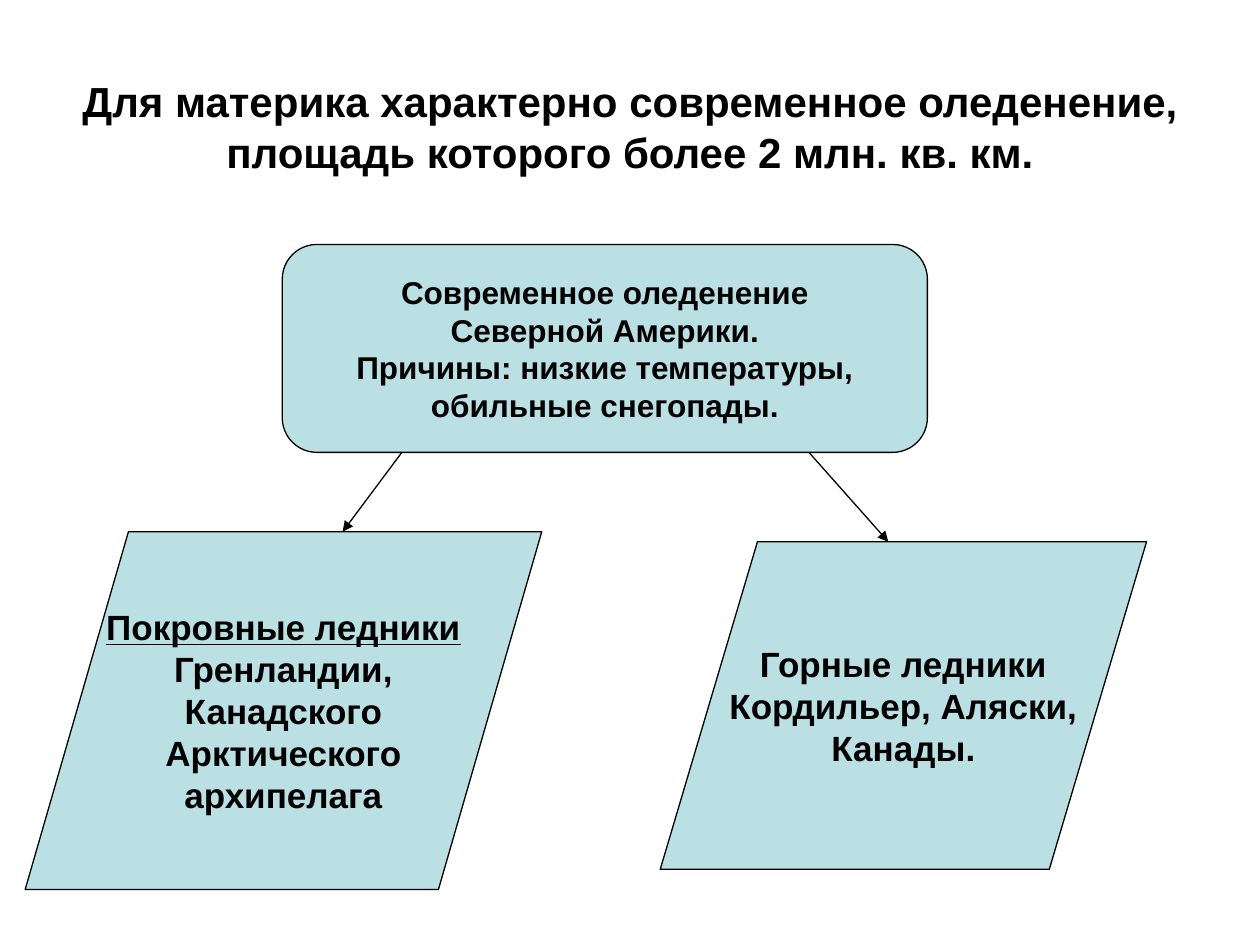
from dataclasses import dataclass

from lxml import etree
from pptx import Presentation
from pptx.dml.color import RGBColor
from pptx.enum.shapes import MSO_CONNECTOR, MSO_SHAPE
from pptx.enum.text import MSO_ANCHOR, MSO_AUTO_SIZE, PP_ALIGN
from pptx.oxml.ns import qn
from pptx.util import Inches, Pt

STRAIGHT = MSO_CONNECTOR.STRAIGHT
ROUNDED, SLANTED = MSO_SHAPE.ROUNDED_RECTANGLE, MSO_SHAPE.FLOWCHART_DATA
MIDDLE, CENTER = MSO_ANCHOR.MIDDLE, PP_ALIGN.CENTER
FIXED = MSO_AUTO_SIZE.NONE
TITLE_ONLY = 5


@dataclass(frozen=True)
class Theme:
    font: str = "Arial"
    ink: RGBColor = RGBColor(0, 0, 0)
    box: RGBColor = RGBColor(0xBB, 0xE0, 0xE3)
    line: Pt = Pt(0.75)
    title: Pt = Pt(24)
    cause: Pt = Pt(18)
    kind: Pt = Pt(20)


THEME = Theme()
WIDTH, HEIGHT = Inches(10), Inches(7.5)
COL, ROW = WIDTH / 100, HEIGHT / 75  # grid of 100 columns by 75 rows


def grid(*cells):
    """Turn alternating column and row counts into lengths."""
    return [round(n * (ROW if i % 2 else COL)) for i, n in enumerate(cells)]


def style(obj, **values):
    for name, value in values.items():
        setattr(obj, name, value)


def write(tf, lines, size, underline_first=False):
    """Write centred bold lines, one paragraph each."""
    style(tf, auto_size=FIXED, vertical_anchor=MIDDLE)
    for i, line in enumerate(lines):
        p = tf.add_paragraph() if i else tf.paragraphs[0]
        p.alignment = CENTER
        r = p.add_run()
        r.text = line
        style(r.font, name=THEME.font, size=size, bold=True,
              underline=underline_first and i == 0)
        r.font.color.rgb = THEME.ink


def outline(line):
    line.color.rgb = THEME.ink
    line.width = THEME.line


def add_title(s, text):
    title = s.shapes.title
    left, top, width, height = grid(5, 3, 90, 18)
    style(title, left=left, top=top, width=width, height=height)
    # The deep bottom margin lifts the text above the middle
    title.text_frame.margin_bottom = Inches(0.45)
    write(title.text_frame, [text], THEME.title)


def add_box(s, kind, cells, lines, size, underline_first=False):
    sp = s.shapes.add_shape(kind, *grid(*cells))
    sp.shadow.inherit = False
    sp.fill.solid()
    sp.fill.fore_color.rgb = THEME.box
    outline(sp.line)
    tf = sp.text_frame
    style(tf, word_wrap=False, margin_left=0, margin_right=0,
          margin_top=0, margin_bottom=0)
    write(tf, lines, size, underline_first)


def add_arrow(s, cells):
    arrow = s.shapes.add_connector(STRAIGHT, *grid(*cells))
    outline(arrow.line)
    etree.SubElement(arrow.line._get_or_add_ln(), qn("a:tailEnd"), type="triangle")
    etree.SubElement(arrow._element.spPr, qn("a:effectLst"))


def main():
    prs = Presentation()
    style(prs, slide_width=WIDTH, slide_height=HEIGHT)
    s = prs.slides.add_slide(prs.slide_layouts[TITLE_ONLY])

    add_title(s, "Для материка характерно современное оледенение, "
                 "площадь которого более 2 млн. кв. км.")

    # Causes of glaciation
    add_box(s, ROUNDED, (22.4, 19.4, 51.2, 16.5),
            ["Современное оледенение", "Северной Америки.",
             "Причины: низкие температуры,", "обильные снегопады."],
            THEME.cause)

    # Two kinds of glaciers
    add_box(s, SLANTED, (2, 42.2, 41, 28.4),
            ["Покровные ледники", "Гренландии,", "Канадского",
             "Арктического", "архипелага"],
            THEME.kind, underline_first=True)
    add_box(s, SLANTED, (52.4, 43, 38.6, 26),
            ["Горные ледники", "Кордильер, Аляски,", "Канады."],
            THEME.kind)

    # Arrows from the causes to each kind
    for cells in ((31.9, 35.9, 27.2, 42.2), (64.2, 35.9, 70.5, 43)):
        add_arrow(s, cells)

    prs.save("out.pptx")


if __name__ == "__main__":
    main()
